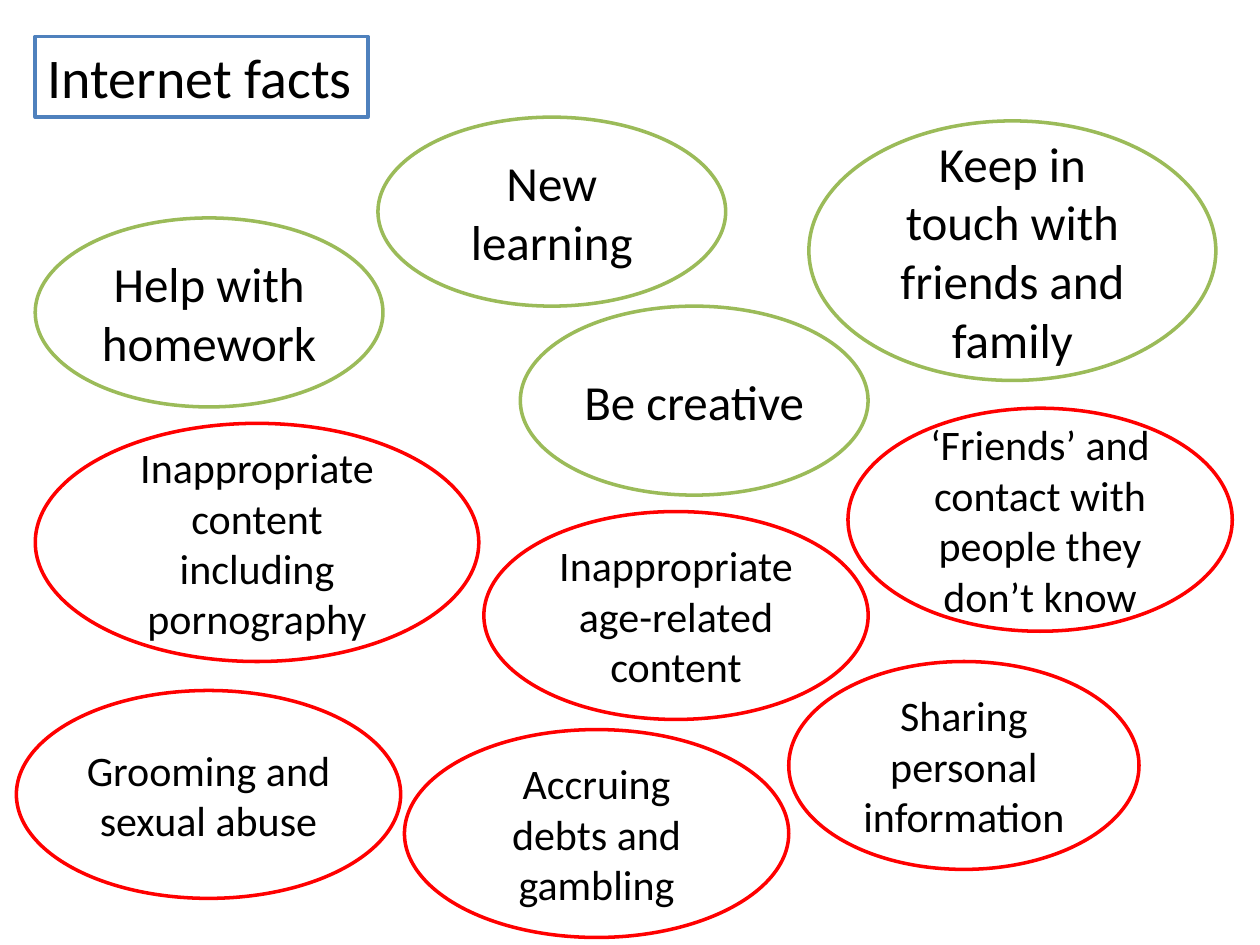
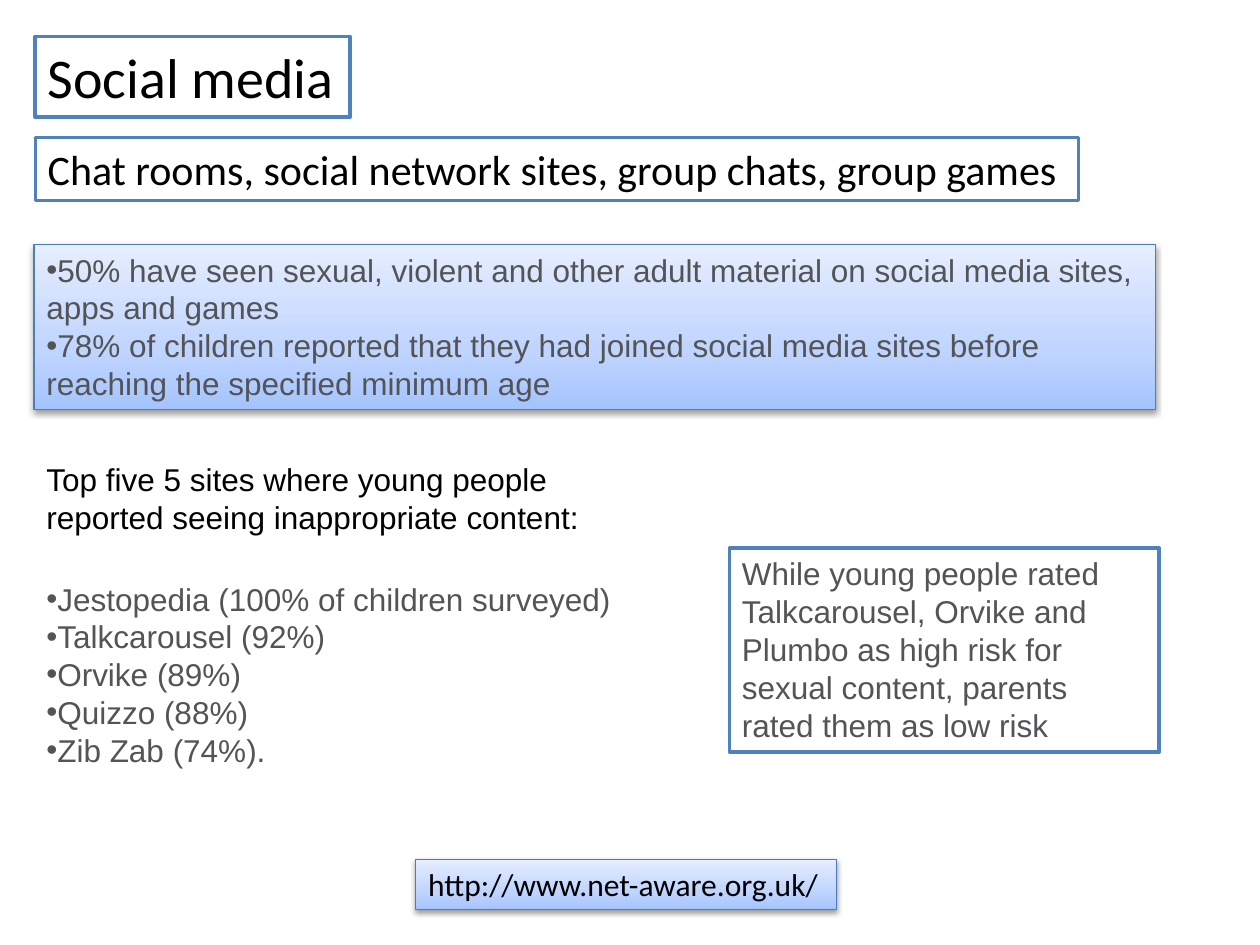
from copy import deepcopy
from dataclasses import dataclass

from lxml.etree import SubElement
from pptx import Presentation
from pptx.dml.color import RGBColor
from pptx.enum.shapes import MSO_SHAPE
from pptx.enum.text import MSO_ANCHOR, MSO_AUTO_SIZE, PP_ALIGN
from pptx.oxml.ns import qn
from pptx.util import Inches, Pt


@dataclass(frozen=True)
class Theme:
    black: str = "000000"
    grey: str = "525455"
    white: str = "FFFFFF"
    blue: str = "4F81BD"
    panel_edge: str = "4B7EBC"
    benefit: str = "9BBB59"
    risk: str = "FF0000"
    gradient: tuple = ((0, "A4C4FF"), (0.35, "BFD4FF"), (1, "E6EEFF"))
    heading: str = "Calibri"
    body: str = "Arial"
    title_size: int = 32
    benefit_size: int = 28
    subtitle_size: int = 24
    body_size: int = 18
    outline: float = 2
    thin_outline: float = 0.75


THEME = Theme()
LEFT = 0.28
BODY_LEFT = 0.27
BODY_FORMAT = {"name": THEME.body, "size": THEME.body_size, "color": THEME.grey}
RISK_SIZE = (3.05, 1.65)
BENEFIT_SIZE = (2.76, 1.5)

BENEFITS = [
    ("Help with homework", (LEFT, 1.73), BENEFIT_SIZE),
    ("New learning", (3, 0.93), BENEFIT_SIZE),
    ("Be creative", (4.13, 2.43), BENEFIT_SIZE),
    ("Keep in touch with friends and family", (6.42, 0.96), (3.23, 2.06)),
]
RISKS = [
    ("Inappropriate content including pornography", (LEFT, 3.36), (3.52, 1.89)),
    ("Accruing debts and gambling", (3.21, 5.79), RISK_SIZE),
    ("‘Friends’ and contact with people they don’t know", (6.73, 3.24), (3.05, 1.77)),
    ("Grooming and sexual abuse", (0.13, 5.48), RISK_SIZE),
    ("Sharing personal information", (6.26, 5.25), (2.78, 1.65)),
    ("Inappropriate age-related content", (3.84, 4.06), RISK_SIZE),
]
FINDINGS = [
    "50% have seen sexual, violent and other adult material on social media sites, "
    "apps and games",
    "78% of children reported that they had joined social media sites before "
    "reaching the specified minimum age",
]
SITES = [
    "Jestopedia (100% of children surveyed)",
    "Talkcarousel (92%)",
    "Orvike (89%)",
    "Quizzo (88%)",
    "Zib Zab (74%).",
]


def heading_format(size):
    return {"name": THEME.heading, "size": size, "color": THEME.black}


def apply_font(font, values):
    for name, value in values.items():
        if name == "color":
            font.color.rgb = RGBColor.from_string(value)
        else:
            setattr(font, name, Pt(value) if name == "size" else value)


def write_text(shape, lines, font_values, alignment=PP_ALIGN.LEFT, bullets=False, **frame_values):
    frame = shape.text_frame
    settings = {
        "word_wrap": True,
        "auto_size": MSO_AUTO_SIZE.SHAPE_TO_FIT_TEXT,
        "vertical_anchor": MSO_ANCHOR.TOP,
    } | frame_values
    for name, value in settings.items():
        setattr(frame, name, value)
    for index, line in enumerate(lines):
        paragraph = frame.paragraphs[0] if index == 0 else frame.add_paragraph()
        paragraph.alignment = alignment
        if bullets:
            properties = paragraph._p.get_or_add_pPr()
            SubElement(properties, qn("a:buFont"), typeface="Arial")
            SubElement(properties, qn("a:buChar"), char="•")
        run = paragraph.add_run()
        run.text = line
        apply_font(run.font, font_values)


def add_outlined(slide, kind, place, line_color, line_width=THEME.outline):
    shape = slide.shapes.add_shape(kind, *map(Inches, place))
    shape.shadow.inherit = False
    shape.fill.solid()
    shape.fill.fore_color.rgb = RGBColor.from_string(THEME.white)
    shape.line.color.rgb = RGBColor.from_string(line_color)
    shape.line.width = Pt(line_width)
    return shape


def add_box(slide, place, lines, font_values, **text_values):
    shape = add_outlined(slide, MSO_SHAPE.RECTANGLE, place, THEME.blue)
    write_text(shape, lines, font_values, **text_values)


def add_title(slide, text, width):
    add_box(slide, (LEFT, 0.29, width, 0.64), [text],
            heading_format(THEME.title_size), word_wrap=False)


def add_bubble(slide, text, position, size, line_color, text_size):
    shape = add_outlined(slide, MSO_SHAPE.OVAL, (*position, *size), line_color)
    write_text(shape, [text], heading_format(text_size), PP_ALIGN.CENTER,
               auto_size=MSO_AUTO_SIZE.NONE, vertical_anchor=MSO_ANCHOR.MIDDLE)


def add_panel(slide, place, lines, font_values, **text_values):
    """Add a rectangle with the blue gradient and a soft shadow below it."""
    shape = add_outlined(slide, MSO_SHAPE.RECTANGLE, place,
                         THEME.panel_edge, THEME.thin_outline)
    shape.fill.gradient()
    shape.fill.gradient_angle = 90
    properties = shape._element.spPr
    stop_list = properties.find(".//" + qn("a:gsLst"))
    stop_list.append(deepcopy(stop_list[0]))
    for stop, (position, color) in zip(shape.fill.gradient_stops, THEME.gradient):
        stop.position = position
        stop.color.rgb = RGBColor.from_string(color)
    shadow = SubElement(properties.find(qn("a:effectLst")), qn("a:outerShdw"),
                        blurRad="40000", dist="20000", dir="5400000", rotWithShape="0")
    shadow_color = SubElement(shadow, qn("a:srgbClr"), val=THEME.black)
    SubElement(shadow_color, qn("a:alpha"), val="38000")
    write_text(shape, lines, font_values, **text_values)


def add_text(slide, place, lines, font_values, **text_values):
    shape = slide.shapes.add_textbox(*map(Inches, place))
    write_text(shape, lines, font_values, **text_values)


def add_blank_slide(presentation):
    return presentation.slides.add_slide(presentation.slide_layouts[6])


def build_internet_facts(presentation):
    slide = add_blank_slide(presentation)
    add_title(slide, "Internet facts", 2.64)
    for bubble in BENEFITS:
        add_bubble(slide, *bubble, THEME.benefit, THEME.benefit_size)
    for bubble in RISKS:
        add_bubble(slide, *bubble, THEME.risk, THEME.subtitle_size)


def build_social_media(presentation):
    slide = add_blank_slide(presentation)
    add_title(slide, "Social media", 2.5)
    add_box(slide, (LEFT, 1.09, 8.28, 0.5),
            ["Chat rooms, social network sites, group chats, group games"],
            heading_format(THEME.subtitle_size), word_wrap=False)
    add_panel(slide, (3.3, 6.82, 3.34, 0.4), ["http://www.net-aware.org.uk/"],
              heading_format(THEME.body_size), word_wrap=False)
    add_text(slide, (BODY_LEFT, 4.55, 5, 1.62), SITES, BODY_FORMAT, bullets=True)
    add_text(slide, (BODY_LEFT, 3.6, 4.65, 0.71),
             ["Top five 5 sites where young people reported seeing inappropriate content:"],
             BODY_FORMAT | {"color": THEME.black})
    add_panel(slide, (BODY_LEFT, 1.94, 8.9, 1.31), FINDINGS, BODY_FORMAT, bullets=True)
    add_box(slide, (5.79, 4.35, 3.41, 1.62),
            ["While young people rated Talkcarousel, Orvike and Plumbo as high risk for "
             "sexual content, parents rated them as low risk"], BODY_FORMAT)


def main():
    presentation = Presentation()
    presentation.slide_width = Inches(10)
    presentation.slide_height = Inches(7.5)
    build_internet_facts(presentation)
    build_social_media(presentation)
    presentation.save("out.pptx")


if __name__ == "__main__":
    main()
